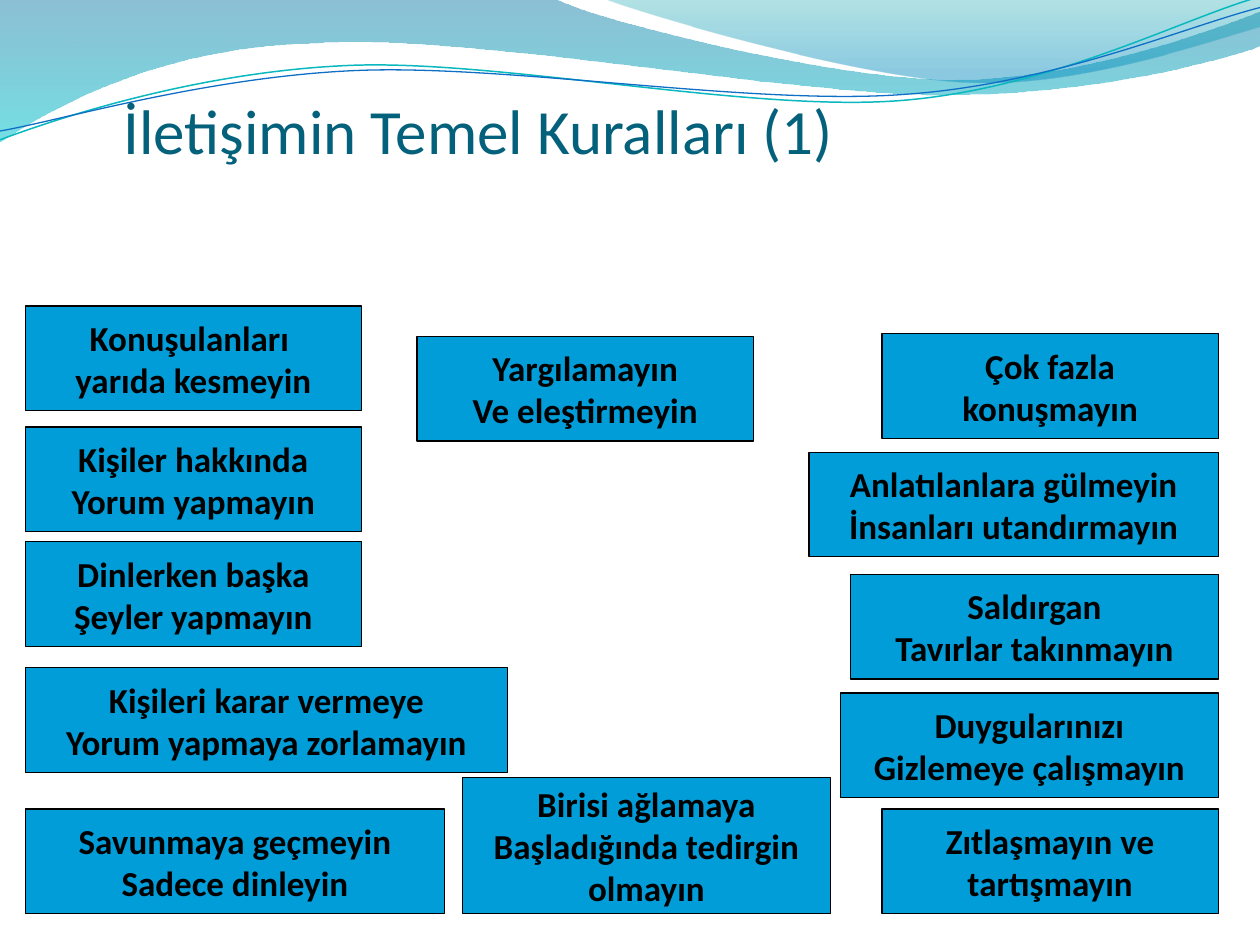
from dataclasses import dataclass

from lxml.etree import SubElement
from pptx import Presentation
from pptx.dml.color import RGBColor
from pptx.enum.shapes import MSO_SHAPE
from pptx.enum.text import MSO_ANCHOR, PP_ALIGN
from pptx.oxml.ns import qn
from pptx.util import Inches, Pt


@dataclass(frozen=True)
class Theme:
    font: str = "Calibri"
    head: str = "04617B"
    card: str = "009DD9"
    ink: str = "000000"
    teal: str = "0AB8BF"
    blue: str = "0F6FC6"
    # Gradient stops: position, colour, opacity in percent
    wave: tuple = ((0, "0074A1", 45), (1, "00C6CF", 55))
    crest: tuple = ((0, "00A1A9", 30), (0.8, "008BBF", 45))
    big: int = 36
    body: int = 20
    edge: float = 0.75


THEME = Theme()
HIGH = 0.83  # usual card height

# Outlines: a pair is a straight step, a six is a Bezier curve
WAVE = [(0, 0), (4.4, -0.01), (4.76, 0.17, 6.64, 0.63, 7.58, 0.63),
        (8.53, 0.63, 9.58, 0.26, 10, 0.09), (10.01, 0.36),
        (9.83, 0.44, 8.7, 0.76, 7.46, 0.75),
        (6.22, 0.75, 3.82, 0.28, 2.57, 0.34),
        (1.29, 0.36, 0.46, 0.83, -0.01, 1.13), (0, 0)]
CREST = [(4.79, -0.01), (5.09, 0.11, 6.82, 0.62, 7.69, 0.65),
         (8.56, 0.69, 9.61, 0.32, 10, 0.21), (10, 0), (4.79, -0.01)]
UPPER = [(0, 1.11), (0.48, 0.93, 1.58, 0.57, 2.77, 0.52),
         (3.95, 0.47, 5.93, 0.89, 7.13, 0.8),
         (8.33, 0.71, 9.38, 0.15, 9.98, -0.02)]
LOWER = [(0, 1.04), (0.47, 0.96, 1.64, 0.61, 2.83, 0.56),
         (4.03, 0.51, 5.97, 0.84, 7.17, 0.75),
         (8.36, 0.67, 9.41, 0.21, 10, 0.06)]

# Cards of a column: drop from its top, width, lines
LEFT = [
    (0, 2.67, ["Konuşulanları ", "yarıda kesmeyin"]),
    (0.96, 2.67, ["Kişiler hakkında", "Yorum yapmayın"]),
    (1.87, 2.67, ["Dinlerken başka", "Şeyler yapmayın"]),
    (2.87, 3.83, ["Kişileri karar vermeye", "Yorum yapmaya zorlamayın"]),
    (3.99, 3.33, ["Savunmaya geçmeyin", "Sadece dinleyin"]),
]
RIGHT = [
    (0, 2.67, ["Çok fazla", "konuşmayın"]),
    (0.94, 3.25, ["Anlatılanlara gülmeyin", "İnsanları utandırmayın"]),
    (1.91, 2.92, ["Saldırgan", "Tavırlar takınmayın"]),
    (2.85, 3, ["Duygularınızı", "Gizlemeye çalışmayın"]),
    (3.77, 2.67, ["Zıtlaşmayın ve", "tartışmayın"]),
]


def paint(color):
    return RGBColor.from_string(color)


def write(para, text, size, color, bold=False):
    run = para.add_run()
    run.text = text
    font = run.font
    font.name, font.size, font.bold = THEME.font, Pt(size), bold
    font.color.rgb = paint(color)


def bend(shape, steps):
    """Join the three straight steps of each Bezier into one curve."""
    route = next(shape.element.iter(qn("a:path")))
    lines = iter(route.findall(qn("a:lnTo")))
    for step in steps[1:]:
        parts = [next(lines) for _ in range(len(step) // 2)]
        if len(parts) == 3:
            curve = SubElement(route, qn("a:cubicBezTo"))
            parts[0].addprevious(curve)
            for part in parts:
                curve.append(part[0])
                route.remove(part)


def draw(slide, box, steps, close):
    left, top = box[:2]
    points = [(Inches(left + step[i]), Inches(top + step[i + 1]))
              for step in steps for i in range(0, len(step), 2)]
    pen = slide.shapes.build_freeform(*points[0])
    pen.add_line_segments(points[1:], close=close)
    shape = pen.convert_to_shape()
    shape.shadow.inherit = False
    bend(shape, steps)
    return shape


def waves(slide, box):
    # Tinted bands
    for steps, stops in ((WAVE, THEME.wave), (CREST, THEME.crest)):
        shape = draw(slide, box, steps, True)
        shape.line.fill.background()
        shape.fill.gradient()
        shape.fill.gradient_angle = 270
        for stop, (place, color, solid) in zip(shape.fill.gradient_stops, stops):
            stop.position = place
            stop.color.rgb = paint(color)
        tints = shape.element.spPr.iter(qn("a:srgbClr"))
        for tint, (place, color, solid) in zip(tints, stops):
            SubElement(tint, qn("a:alpha"), val=str(solid * 1000))
    # Thin lines
    for steps, color, width in ((UPPER, THEME.teal, 0.85),
                                (LOWER, THEME.blue, 0.75)):
        shape = draw(slide, box, steps, False)
        shape.fill.background()
        shape.line.color.rgb = paint(color)
        shape.line.width = Pt(width)


def title(slide, box, text):
    frame = slide.shapes.add_textbox(*map(Inches, box)).text_frame
    frame.word_wrap = True
    frame.vertical_anchor = MSO_ANCHOR.BOTTOM
    frame.margin_left = frame.margin_right = frame.margin_bottom = 0
    frame.margin_top = Inches(0.05)
    write(frame.paragraphs[0], text, THEME.big, THEME.head)


def card(slide, box, lines):
    shape = slide.shapes.add_shape(MSO_SHAPE.RECTANGLE, *map(Inches, box))
    shape.shadow.inherit = False
    shape.fill.solid()
    shape.fill.fore_color.rgb = paint(THEME.card)
    shape.line.color.rgb = paint(THEME.ink)
    shape.line.width = Pt(THEME.edge)
    frame = shape.text_frame
    frame.word_wrap = False
    frame.vertical_anchor = MSO_ANCHOR.MIDDLE
    for i, line in enumerate(lines):
        para = frame.add_paragraph() if i else frame.paragraphs[0]
        para.alignment = PP_ALIGN.CENTER
        write(para, line, THEME.body, THEME.ink, True)


def column(slide, box, cards, flush=0):
    """Stack cards against the left (0) or right (1) side of the box."""
    left, top, wide = box[:3]
    for drop, width, lines in cards:
        start = left + flush * (wide - width)
        card(slide, (start, top + drop, width, HIGH), lines)


def middle(slide, box):
    left, top, wide, high = box
    card(slide, (left, top, 2.67, HIGH), ["Yargılamayın", "Ve eleştirmeyin"])
    width, tall = 2.92, 1.08
    card(slide, (left + wide - width, top + high - tall, width, tall),
         ["Birisi ağlamaya", "Başladığında tedirgin", "olmayın"])


def main():
    deck = Presentation()
    deck.slide_width, deck.slide_height = Inches(10), Inches(7.5)
    slide = deck.slides.add_slide(deck.slide_layouts[6])
    waves(slide, (0, 0, 10, 1.14))
    title(slide, (0.98, 0.76, 8.52, 0.57), "İletişimin Temel Kuralları (1)")
    column(slide, (0.2, 2.43, 3.83, 4.82), LEFT)
    middle(slide, (3.31, 2.67, 3.28, 4.58))
    column(slide, (6.42, 2.65, 3.25, 4.6), RIGHT, flush=1)
    deck.save("out.pptx")


if __name__ == "__main__":
    main()
